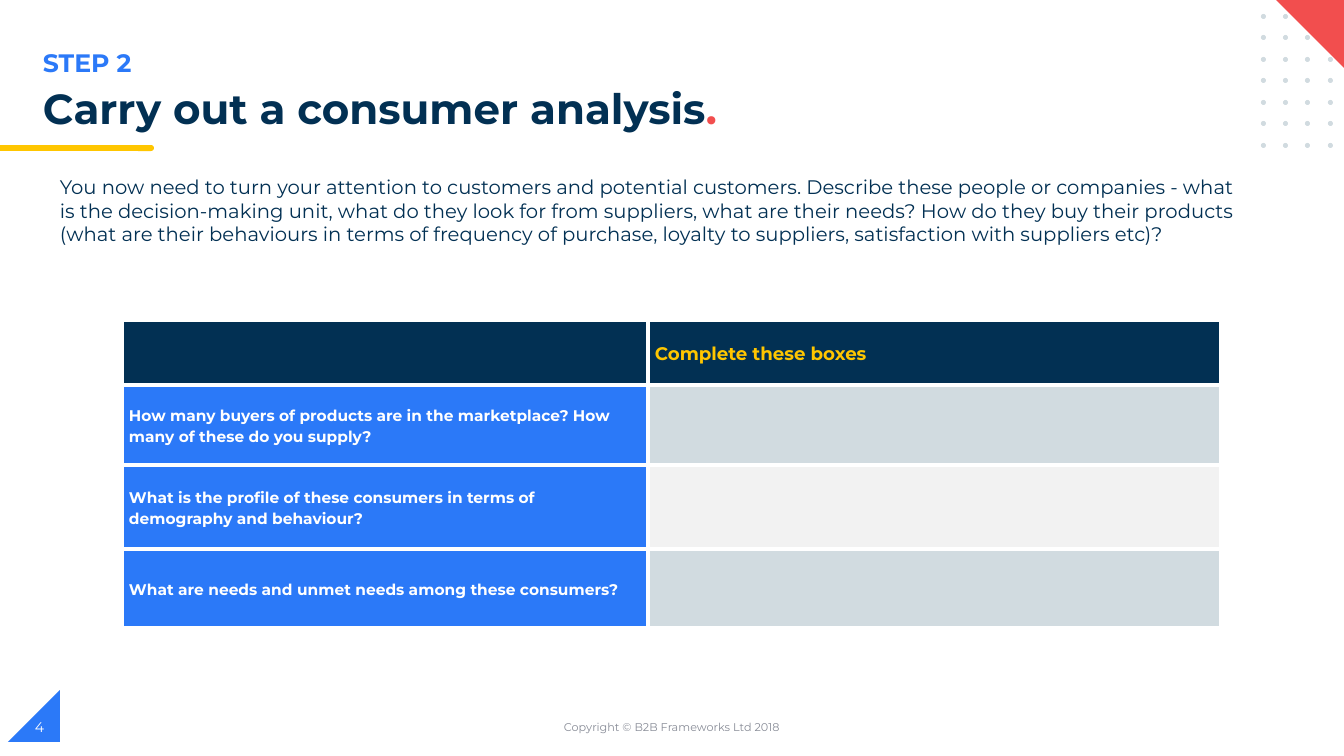
import lxml.etree
import pptx
import pptx.dml.color
import pptx.enum.shapes
import pptx.enum.text
import pptx.oxml.ns
import pptx.util

RGB = pptx.dml.color.RGBColor
SHAPE = pptx.enum.shapes.MSO_SHAPE
ALIGN = pptx.enum.text.PP_ALIGN
ANCHOR = pptx.enum.text.MSO_ANCHOR
NAVY = RGB(0x02, 0x30, 0x53)
BLUE = RGB(0x2B, 0x79, 0xF8)
YELLOW = RGB(0xFF, 0xC6, 0x00)
RED = RGB(0xF2, 0x4E, 0x4E)
MIST = RGB(0xD1, 0xDB, 0xE0)
PALE = RGB(0xF2, 0xF2, 0xF2)
GREY = RGB(0x88, 0x8C, 0x97)
WHITE = RGB(0xFF, 0xFF, 0xFF)
FONT = "Montserrat"

STEP = "STEP 2"
TITLE = "Carry out a consumer analysis"
INTRO = (
    "You now need to turn your attention to customers and potential customers. "
    "Describe these people or companies - what is the decision-making unit, "
    "what do they look for from suppliers, what are their needs? "
    "How do they buy their products (what are their behaviours in terms of "
    "frequency of purchase, loyalty to suppliers, satisfaction with suppliers etc)?"
)
HEADING = "Complete these boxes"
QUESTIONS = [
    "How many buyers of products are in the marketplace? How many of these do you supply?",
    "What is the profile of these consumers in terms of demography and behaviour?",
    "What are needs and unmet needs among these consumers?",
]
COPYRIGHT = "Copyright © B2B Frameworks Ltd 2018"
PAGE_NUMBER = "4"

COLUMN_WIDTHS = [526, 573]
ROW_HEIGHTS = [65, 80, 84, 79]
DOT_COLUMNS, DOT_ROWS = 4, 7


def px(length):
    return pptx.util.Emu(round(length * 914400 / 100.8))


def write(frame, text, size, color, bold=False, align=ALIGN.LEFT, spacing=None, ending=None):
    para = frame.paragraphs[0]
    para.alignment = align
    if spacing:
        para.line_spacing = spacing
    for words, tint in [(text, color), ending or ("", color)]:
        if words:
            span = para.add_run()
            span.text = words
            span.font.name = FONT
            span.font.size = pptx.util.Pt(size)
            span.font.bold = bold
            span.font.color.rgb = tint


def add_text(page, place, text, size, color, anchor=ANCHOR.TOP, **style):
    box = page.shapes.add_textbox(*map(px, place))
    box.text_frame.word_wrap = True
    box.text_frame.vertical_anchor = anchor
    write(box.text_frame, text, size, color, **style)


def add_block(page, kind, place, color, rotation=0):
    block = page.shapes.add_shape(kind, *map(px, place))
    block.shadow.inherit = False
    block.fill.solid()
    block.fill.fore_color.rgb = color
    block.line.fill.background()
    block.rotation = rotation


def paint_cell(cell, color):
    properties = cell._tc.get_or_add_tcPr()
    for side in ("a:lnL", "a:lnR", "a:lnT", "a:lnB"):
        border = lxml.etree.SubElement(
            properties, pptx.oxml.ns.qn(side), w=str(pptx.util.Pt(3)))
        fill = lxml.etree.SubElement(border, pptx.oxml.ns.qn("a:solidFill"))
        lxml.etree.SubElement(fill, pptx.oxml.ns.qn("a:srgbClr"), val=str(WHITE))
    cell.fill.solid()
    cell.fill.fore_color.rgb = color
    cell.vertical_anchor = ANCHOR.MIDDLE
    cell.margin_left = cell.margin_right = px(7)
    cell.margin_top = cell.margin_bottom = 0


def add_questions(page):
    frame = page.shapes.add_table(
        len(ROW_HEIGHTS), len(COLUMN_WIDTHS), px(122), px(320),
        px(sum(COLUMN_WIDTHS)), px(sum(ROW_HEIGHTS)))
    table = frame.table
    table.horz_banding = False
    for column, width in zip(table.columns, COLUMN_WIDTHS):
        column.width = px(width)
    for row, height in zip(table.rows, ROW_HEIGHTS):
        row.height = px(height)
    for cell in table.rows[0].cells:
        paint_cell(cell, NAVY)
    write(table.cell(0, 1).text_frame, HEADING, 13, YELLOW, bold=True, spacing=1.15)
    for number, question in enumerate(QUESTIONS, 1):
        label, answer = table.rows[number].cells
        paint_cell(label, BLUE)
        paint_cell(answer, MIST if number % 2 else PALE)
        write(label.text_frame, question, 11, WHITE, bold=True, spacing=1.15)


def main():
    deck = pptx.Presentation()
    deck.slide_width, deck.slide_height = px(1344), px(756)
    page = deck.slides.add_slide(deck.slide_layouts[6])

    add_block(page, SHAPE.RIGHT_TRIANGLE, (8, 690, 52, 52), BLUE, rotation=270)
    add_block(page, SHAPE.FLOWCHART_TERMINATOR, (135, 145, 19, 6), YELLOW)
    add_block(page, SHAPE.RECTANGLE, (0, 145, 142, 6), YELLOW)
    for row in range(DOT_ROWS):
        for column in range(DOT_COLUMNS):
            place = (1261 + column * 67 // 3, 14 + row * 43 // 2, 5, 5)
            add_block(page, SHAPE.OVAL, place, MIST)
    add_block(page, SHAPE.RIGHT_TRIANGLE, (1276, 0, 68, 68), RED, rotation=180)

    add_text(page, (33, 42, 674, 40), STEP, 18, BLUE, bold=True)
    add_text(page, (33, 83, 1124, 56), TITLE, 30, NAVY, bold=True, spacing=0.9,
             ending=(".", RED))
    add_text(page, (50, 170, 1205, 82), INTRO, 14, NAVY)
    add_questions(page)
    add_text(page, (445, 707, 454, 40), COPYRIGHT, 8, GREY,
             anchor=ANCHOR.MIDDLE, align=ALIGN.CENTER)
    add_text(page, (25, 707, 302, 40), PAGE_NUMBER, 10, WHITE, anchor=ANCHOR.MIDDLE)
    deck.save("out.pptx")


if __name__ == "__main__":
    main()
